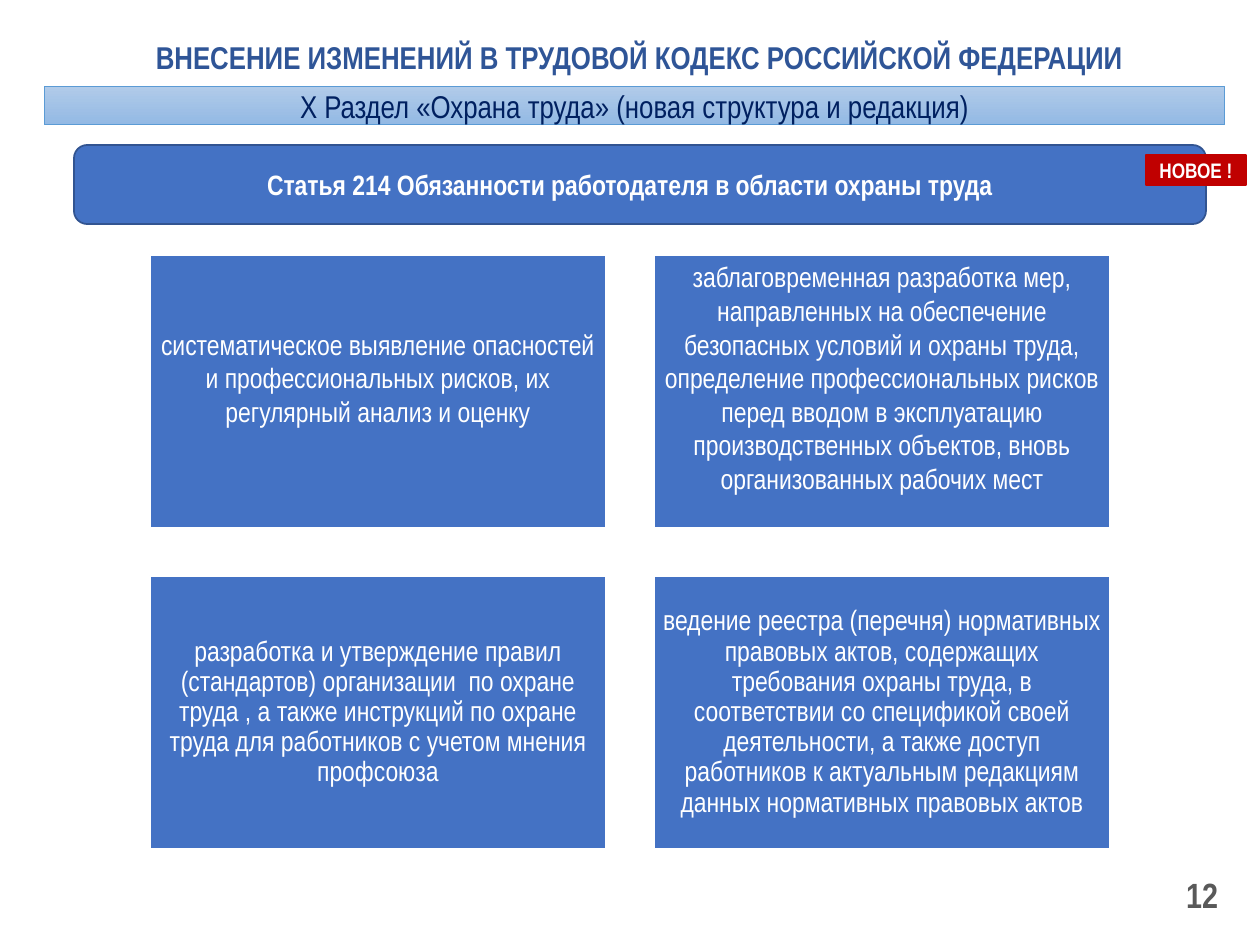
import pptx
import pptx.util
import pptx.dml.color
import pptx.enum.shapes
import pptx.enum.text

RGB = pptx.dml.color.RGBColor
KIND = pptx.enum.shapes.MSO_SHAPE
ALIGN = pptx.enum.text.PP_ALIGN

WHITE = RGB(0xFF, 0xFF, 0xFF)
BLUE = RGB(0x44, 0x72, 0xC4)
EDGE = RGB(0x32, 0x54, 0x91)
HEAD = RGB(0x2F, 0x55, 0x97)
NAVY = RGB(0x00, 0x20, 0x60)
RED = RGB(0xC0, 0x00, 0x00)
GREY = RGB(0x59, 0x59, 0x59)
SKY = RGB(0x5B, 0x9B, 0xD5)
PALE = RGB(0xB1, 0xCB, 0xE9)
DEEP = RGB(0x93, 0xB9, 0xE4)

DUTIES = [
    "систематическое выявление опасностей и профессиональных рисков, их регулярный анализ и оценку",
    "заблаговременная разработка мер, направленных на обеспечение безопасных условий и охраны труда, "
    "определение профессиональных рисков перед вводом в эксплуатацию производственных объектов, "
    "вновь организованных рабочих мест",
    "разработка и утверждение правил (стандартов) организации  по охране труда , "
    "а также инструкций по охране труда для работников с учетом мнения профсоюза",
    "ведение реестра (перечня) нормативных правовых актов, содержащих требования охраны труда, "
    "в соответствии со спецификой своей деятельности, а также доступ работников "
    "к актуальным редакциям данных нормативных правовых актов",
]


def px(count):
    return pptx.util.Emu(round(count * 914400 / 126))


def write(shape, text, size=16, color=WHITE, bold=False, align=ALIGN.CENTER,
          pad=(13, 0, 13, 0), lead=1.0):
    frame = shape.text_frame
    frame.word_wrap = True
    frame.auto_size = pptx.enum.text.MSO_AUTO_SIZE.NONE
    frame.vertical_anchor = pptx.enum.text.MSO_ANCHOR.MIDDLE
    (frame.margin_left, frame.margin_top,
     frame.margin_right, frame.margin_bottom) = map(px, pad)
    para = frame.paragraphs[0]
    para.alignment = align
    para.line_spacing = lead
    run = para.add_run()
    run.text = text
    run.font.name = "Arial Narrow"
    run.font.size = pptx.util.Pt(size)
    run.font.bold = bold
    run.font.color.rgb = color


class Deck:
    def __init__(self):
        self.show = pptx.Presentation()
        self.show.slide_width = px(1260)
        self.show.slide_height = px(945)
        self.slide = self.show.slides.add_slide(self.show.slide_layouts[5])

    def title(self, area, text, **style):
        shape = self.slide.shapes.title
        shape.left, shape.top, shape.width, shape.height = map(px, area)
        write(shape, text, **style)

    def label(self, area, text, **style):
        write(self.slide.shapes.add_textbox(*map(px, area)), text, **style)

    def box(self, area, text, fill=BLUE, fade=None, line=WHITE, width=1,
            kind=KIND.RECTANGLE, **style):
        shape = self.slide.shapes.add_shape(kind, *map(px, area))
        shape.shadow.inherit = False
        if fade:
            shape.fill.gradient()
            shape.fill.gradient_angle = 270
            for stop, color in zip(shape.fill.gradient_stops, (fill, fade)):
                stop.color.rgb = color
        else:
            shape.fill.solid()
            shape.fill.fore_color.rgb = fill
        shape.line.color.rgb = line
        shape.line.width = pptx.util.Pt(width)
        write(shape, text, **style)


def main():
    deck = Deck()
    deck.label((937, 870, 294, 50), "12", size=20, color=GREY, bold=True, align=ALIGN.RIGHT)
    deck.title((104, 17, 1071, 80), "ВНЕСЕНИЕ ИЗМЕНЕНИЙ В ТРУДОВОЙ КОДЕКС РОССИЙСКОЙ ФЕДЕРАЦИИ",
               size=18, color=HEAD, bold=True)
    deck.box((74, 145, 1132, 79), "Статья 214 Обязанности работодателя в области охраны труда",
             line=EDGE, kind=KIND.ROUNDED_RECTANGLE, bold=True, pad=(13, 0, 33, 0))
    for index, duty in enumerate(DUTIES):
        row, col = divmod(index, 2)
        lead, pad = (0.9, (9, 9, 9, 9)) if row else (1.0, (9, 0, 9, 28))
        deck.box((150 + 504 * col, 255 + 321 * row, 456, 273), duty, lead=lead, pad=pad)
    deck.box((1146, 155, 100, 30), "НОВОЕ !", fill=RED, line=RED,
             size=12, bold=True, pad=(6, 0, 6, 0))
    deck.box((44, 86, 1181, 39), "Х Раздел «Охрана труда» (новая структура и редакция)",
             fill=PALE, fade=DEEP, line=SKY, width=0.5, size=18, color=NAVY)
    deck.show.save("out.pptx")


if __name__ == "__main__":
    main()
